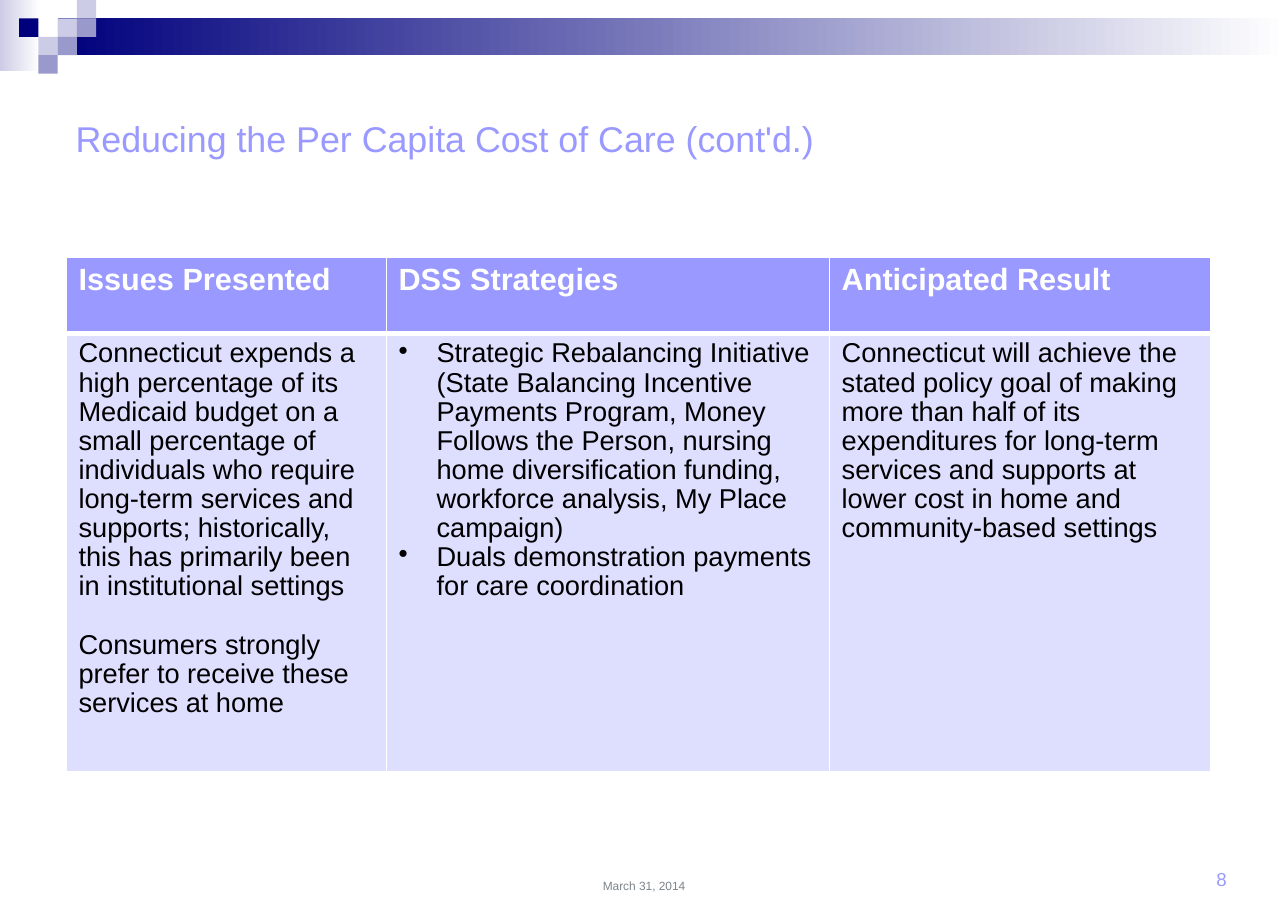
from dataclasses import dataclass

from lxml.etree import SubElement
from pptx import Presentation
from pptx.dml.color import RGBColor
from pptx.enum.shapes import MSO_SHAPE
from pptx.enum.text import MSO_ANCHOR, PP_ALIGN
from pptx.oxml.ns import qn
from pptx.util import Inches, Pt


@dataclass(frozen=True)
class Theme:
    font: str = "Arial"
    navy: str = "00007D"
    violet: str = "9999CC"
    mist: str = "CCCCE6"
    accent: str = "9999FF"
    pale: str = "DEDEFF"
    white: str = "FFFFFF"
    black: str = "000000"
    gray: str = "7C848A"
    title_size: int = 21
    header_size: int = 18
    body_size: int = 16
    number_size: int = 11
    date_size: int = 7
    table_spacing: float = 0.96
    paragraph_gap: float = 17.7
    bullet_indent: float = 0.31


def write_text(frame, text, *, font, size, color, bold=False, align=PP_ALIGN.LEFT,
               spacing=None, gap=0, bullet_indent=None):
    """Fill a text frame, one paragraph for each line of text."""
    frame.word_wrap = True
    for index, line in enumerate(text.split("\n")):
        paragraph = frame.add_paragraph() if index else frame.paragraphs[0]
        paragraph.alignment = align
        if spacing:
            paragraph.line_spacing = spacing
        if index and gap:
            paragraph.space_before = Pt(gap)
        if bullet_indent:
            properties = paragraph._p.get_or_add_pPr()
            properties.set("marL", str(Inches(bullet_indent)))
            properties.set("indent", str(-Inches(bullet_indent)))
            SubElement(properties, qn("a:buChar"), char="•")
        run = paragraph.add_run()
        run.text = line
        run.font.name = font
        run.font.size = Pt(size)
        run.font.bold = bold
        run.font.color.rgb = RGBColor.from_string(color)


class SlideBuilder:
    """Places elements on a grid of 67 columns and 50 rows."""
    columns, rows = 67, 50

    def __init__(self, presentation, theme):
        self.theme = theme
        self.column = presentation.slide_width / self.columns
        self.row = presentation.slide_height / self.rows
        self.slide = presentation.slides.add_slide(presentation.slide_layouts[6])

    def place(self, left, top, width, height):
        return (round(left * self.column), round(top * self.row),
                round(width * self.column), round(height * self.row))

    def rectangle(self, area, *colors):
        """One colour gives a solid fill, two a gradient from left to right."""
        shape = self.slide.shapes.add_shape(MSO_SHAPE.RECTANGLE, *self.place(*area))
        shape.shadow.inherit = False
        shape.line.fill.background()
        if len(colors) == 1:
            shape.fill.solid()
            shape.fill.fore_color.rgb = RGBColor.from_string(colors[0])
            return
        shape.fill.gradient()
        shape.fill.gradient_angle = 0
        for position, (stop, color) in enumerate(zip(shape.fill.gradient_stops, colors)):
            stop.position = position
            stop.color.rgb = RGBColor.from_string(color)

    def text(self, area, text, anchor=MSO_ANCHOR.BOTTOM, **text_format):
        shape = self.slide.shapes.add_textbox(*self.place(*area))
        shape.text_frame.vertical_anchor = anchor
        write_text(shape.text_frame, text, font=self.theme.font, **text_format)

    def border(self, cell, bottom_width):
        properties = cell._tc.get_or_add_tcPr()
        for side, width in (("L", 1), ("R", 1), ("T", 1), ("B", bottom_width)):
            line = SubElement(properties, qn(f"a:ln{side}"), w=str(Pt(width)))
            fill = SubElement(line, qn("a:solidFill"))
            SubElement(fill, qn("a:srgbClr"), val=self.theme.white)

    def table(self, left, top, widths, heights, records):
        theme = self.theme
        area = self.place(left, top, sum(widths), sum(heights))
        table = self.slide.shapes.add_table(len(heights), len(widths), *area).table
        for column, width in zip(table.columns, widths):
            column.width = round(width * self.column)
        for row, height in zip(table.rows, heights):
            row.height = round(height * self.row)
        for row_index, record in enumerate(records):
            header = row_index == 0
            for column_index, (text, options) in enumerate(record):
                cell = table.cell(row_index, column_index)
                self.border(cell, 3 if header else 1)
                cell.fill.solid()
                cell.fill.fore_color.rgb = RGBColor.from_string(
                    theme.accent if header else theme.pale)
                write_text(cell.text_frame, text, font=theme.font, bold=header,
                           size=theme.header_size if header else theme.body_size,
                           color=theme.white if header else theme.black,
                           spacing=theme.table_spacing, **options)


def main():
    theme = Theme()
    presentation = Presentation()
    presentation.slide_width, presentation.slide_height = Inches(10.5), Inches(7.5)
    builder = SlideBuilder(presentation, theme)

    # Banner: two fading bars and a checker of one-cell squares
    builder.rectangle((0, 0, 2.1, 3.87), theme.mist, theme.white)
    builder.rectangle((3, 1, 64, 2), theme.navy, theme.white)
    squares = {theme.mist: [(3, 1), (4, 0), (2, 2)],
               theme.violet: [(4, 1), (3, 2), (2, 3)],
               theme.navy: [(1, 1)]}
    for color, cells in squares.items():
        for column, row in cells:
            builder.rectangle((column, row, 1, 1), color)

    # Strategy table
    headers = ("Issues Presented", "DSS Strategies", "Anticipated Result")
    issues = (
        "Connecticut expends a high percentage of its Medicaid budget on a small "
        "percentage of individuals who require long-term services and supports; "
        "historically, this has primarily been in institutional settings\n"
        "Consumers strongly prefer to receive these services at home")
    strategies = (
        "Strategic Rebalancing Initiative (State Balancing Incentive Payments Program, "
        "Money Follows the Person, nursing home diversification funding, workforce "
        "analysis, My Place campaign)\n"
        "Duals demonstration payments for care coordination")
    result = (
        "Connecticut will achieve the stated policy goal of making more than half of its "
        "expenditures for long-term services and supports at lower cost in home and "
        "community-based settings")
    builder.table(3.45, 14, (16.65, 23.05, 19.85), (4.13, 23.8), [
        [(header, {}) for header in headers],
        [(issues, {"gap": theme.paragraph_gap}),
         (strategies, {"bullet_indent": theme.bullet_indent}),
         (result, {})]])

    # Title and footer
    builder.text((3.3, 4.73, 60.3, 5.53), "Reducing the Per Capita Cost of Care (cont'd.)",
                 anchor=MSO_ANCHOR.MIDDLE, size=theme.title_size, color=theme.accent)
    builder.text((22.9, 45.53, 21.2, 3.33), "March 31, 2014", align=PP_ALIGN.CENTER,
                 size=theme.date_size, color=theme.gray)
    builder.text((61.32, 47.53, 3.13, 1.2), "8", align=PP_ALIGN.RIGHT,
                 size=theme.number_size, color=theme.accent)

    presentation.save("out.pptx")


if __name__ == "__main__":
    main()
